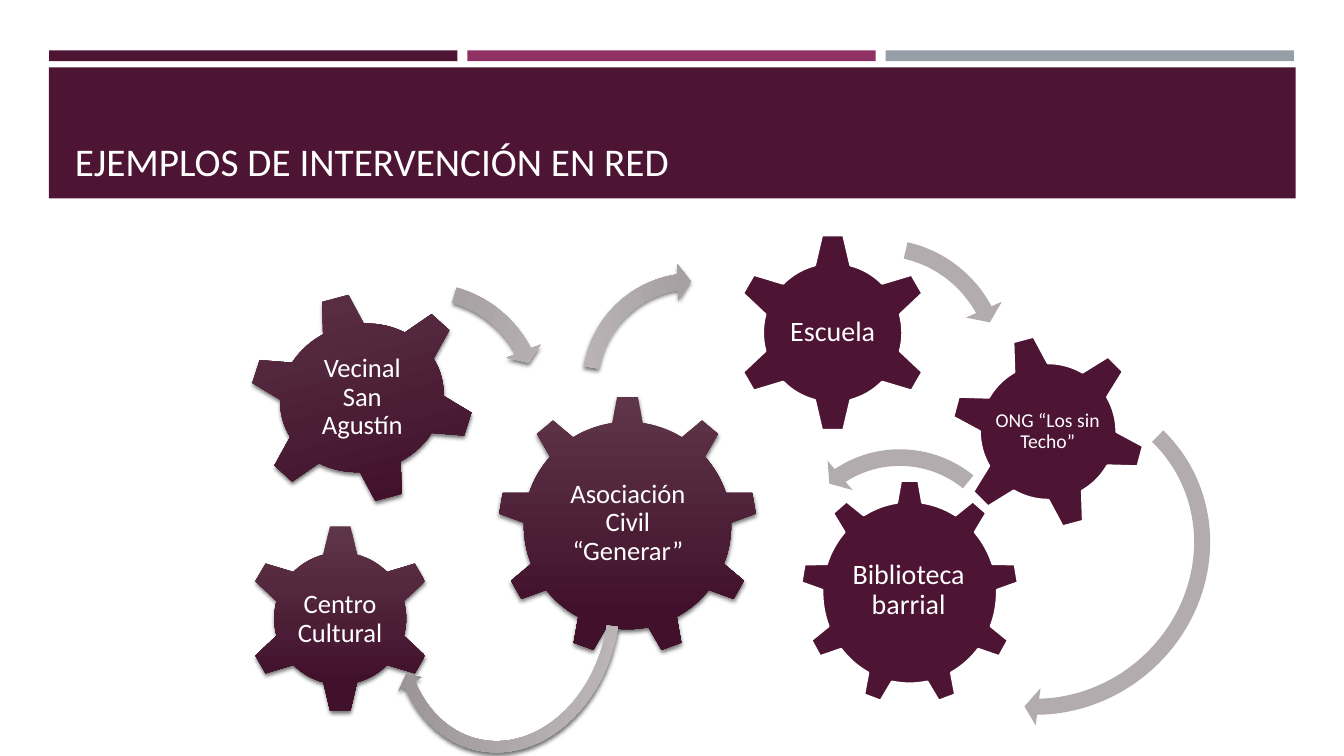
"""Build the slide with two networks of gears linked by circular arrows."""
from dataclasses import dataclass
from typing import Any

from lxml import etree
from pptx import Presentation
from pptx.dml.color import RGBColor
from pptx.enum.shapes import MSO_SHAPE
from pptx.enum.text import MSO_ANCHOR, MSO_AUTO_SIZE, PP_ALIGN
from pptx.oxml.ns import qn
from pptx.util import Cm, Pt

RECTANGLE = MSO_SHAPE.RECTANGLE
GEAR_SIX, GEAR_NINE = MSO_SHAPE.GEAR_6, MSO_SHAPE.GEAR_9
CLOCKWISE, COUNTER = MSO_SHAPE.CIRCULAR_ARROW, MSO_SHAPE.LEFT_CIRCULAR_ARROW
MIDDLE, BOTTOM = MSO_ANCHOR.MIDDLE, MSO_ANCHOR.BOTTOM
CENTER, LEFT = PP_ALIGN.CENTER, PP_ALIGN.LEFT
NO_AUTOFIT = MSO_AUTO_SIZE.NONE
TITLE_ONLY_LAYOUT = 5

Box = tuple[float, float, float, float]
Paint = tuple[str, ...]


@dataclass(frozen=True)
class Theme:
    font: str = "Calibri"
    white: str = "FFFFFF"
    plum: str = "4D1434"
    bars: Paint = ("4D1434", "903163", "969FA7")
    shaded_gear: Paint = ("5F3649", "41112C")
    shaded_arrow: Paint = ("C5C0C2", "978F92")
    flat_arrow: Paint = ("B2ACAE",)
    gradient_end: float = 0.84
    title_size: float = 28
    large_size: float = 20
    medium_size: float = 19
    small_size: float = 14
    outline_width: float = 1.75


@dataclass(frozen=True)
class Gear:
    text: str
    kind: Any
    box: Box
    label_box: Box
    size: float
    rotation: float = 0


@dataclass(frozen=True)
class Arrow:
    kind: Any
    box: Box
    rotation: float
    curve: tuple[float, ...]
    flipped: bool = False


@dataclass(frozen=True)
class Network:
    gears: tuple[Gear, ...]
    arrows: tuple[Arrow, ...]
    gear_paint: Paint
    arrow_paint: Paint
    outlined: bool


THEME = Theme()
LONG_CURVE = (0.047, 2.99, 25.2, 158.5, 0.055)
LEFT_CURVE = (0.065, 4.3, 104.89, 148.38, 0.075)
SHORT_CURVE = (0.06, 3.94, 133.14, 105.08, 0.07)

NETWORKS = (
    Network(
        (
            Gear("Asociación Civil “Generar”", GEAR_NINE, (12.55, 9.98, 6.53, 6.53),
                 (13.87, 11.51, 3.91, 3.35), THEME.medium_size),
            Gear("Centro Cultural", GEAR_SIX, (6.2, 13.21, 4.75, 4.75),
                 (7.39, 14.43, 2.36, 2.34), THEME.medium_size),
            Gear("Vecinal San Agustín", GEAR_SIX, (6.25, 7.37, 5.74, 5.31),
                 (7.54, 8.51, 3.18, 3.02), THEME.medium_size, 345),
        ),
        (
            Arrow(CLOCKWISE, (9.07, 12.47, 7.39, 6.02), 102.2, LONG_CURVE),
            Arrow(COUNTER, (14.43, 6.63, 6.07, 6.07), 256.3, LEFT_CURVE, True),
            Arrow(CLOCKWISE, (7.42, 6.88, 6.55, 6.55), 110.5, SHORT_CURVE),
        ),
        THEME.shaded_gear, THEME.shaded_arrow, False,
    ),
    Network(
        (
            Gear("Biblioteca barrial", GEAR_NINE, (20.17, 12.09, 5.51, 5.69),
                 (21.26, 13.41, 3.28, 2.95), THEME.large_size),
            Gear("Escuela", GEAR_SIX, (18.47, 5.87, 5.03, 5.03),
                 (19.74, 7.14, 2.49, 2.49), THEME.large_size),
            Gear("ONG “Los sin Techo”", GEAR_SIX, (23.95, 8.41, 4.93, 4.93),
                 (25.02, 9.5, 2.77, 2.77), THEME.small_size, 345),
        ),
        (
            Arrow(CLOCKWISE, (22.02, 9.35, 8.61, 9.07), 50.4, LONG_CURVE),
            Arrow(COUNTER, (19.46, 11.05, 6.43, 6.43), 61.8, LEFT_CURVE),
            Arrow(CLOCKWISE, (18.49, 5.82, 7.26, 7.09), 107.8, SHORT_CURVE),
        ),
        (THEME.plum,), THEME.flat_arrow, True,
    ),
)


def color(value: str) -> RGBColor:
    return RGBColor.from_string(value)


def lengths(box: Box) -> list[Cm]:
    return [Cm(value) for value in box]


def apply_format(target: Any, values: dict[str, Any]) -> None:
    for name, value in values.items():
        setattr(target, name, value)


def add_shadow(shape: Any) -> None:
    effects = shape.element.spPr.find(qn("a:effectLst"))
    shadow = etree.SubElement(effects, qn("a:outerShdw"), blurRad=str(Pt(3)),
                              dist=str(Pt(2)), dir="5400000", rotWithShape="0")
    shade = etree.SubElement(shadow, qn("a:srgbClr"), val="000000")
    etree.SubElement(shade, qn("a:alpha"), val="55000")


def add_painted(shapes: Any, kind: Any, box: Box, paint: Paint, rotation: float = 0) -> Any:
    shape = shapes.add_shape(kind, *lengths(box))
    shape.rotation = rotation
    shape.shadow.inherit = False
    shape.line.fill.background()
    if len(paint) == 1:
        shape.fill.solid()
        shape.fill.fore_color.rgb = color(paint[0])
        return shape
    shape.fill.gradient()
    shape.fill.gradient_angle = 270
    for stop, value, position in zip(shape.fill.gradient_stops, paint, (0, THEME.gradient_end)):
        apply_format(stop, {"position": position})
        stop.color.rgb = color(value)
    add_shadow(shape)
    return shape


def write_text(shape: Any, text: str, size: float, frame: dict[str, Any],
               layout: dict[str, Any]) -> None:
    text_frame = shape.text_frame
    text_frame.text = text
    apply_format(text_frame, {"word_wrap": True, "auto_size": NO_AUTOFIT} | frame)
    paragraph = text_frame.paragraphs[0]
    apply_format(paragraph, layout)
    font = paragraph.runs[0].font
    apply_format(font, {"name": THEME.font, "size": Pt(size)})
    font.color.rgb = color(THEME.white)


def add_gear(shapes: Any, gear: Gear, network: Network) -> None:
    shape = add_painted(shapes, gear.kind, gear.box, network.gear_paint, gear.rotation)
    if network.outlined:
        shape.line.color.rgb = color(THEME.white)
        shape.line.width = Pt(THEME.outline_width)
    label = shapes.add_textbox(*lengths(gear.label_box))
    sides = ("margin_left", "margin_top", "margin_right", "margin_bottom")
    write_text(label, gear.text, gear.size,
               {"vertical_anchor": MIDDLE} | dict.fromkeys(sides, Cm(0.07)),
               {"alignment": CENTER, "line_spacing": 0.9})


def add_arrow(shapes: Any, arrow: Arrow, paint: Paint) -> None:
    shape = add_painted(shapes, arrow.kind, arrow.box, paint, arrow.rotation)
    for index, value in enumerate(arrow.curve):
        shape.adjustments[index] = value
    if arrow.flipped:
        shape.element.spPr.find(qn("a:xfrm")).set("flipH", "1")


def add_heading(slide: Any) -> None:
    for index, value in enumerate(THEME.bars):
        add_painted(slide.shapes, RECTANGLE, (1.24 + 10.54 * index, 1.27, 10.29, 0.27), (value,))
    add_painted(slide.shapes, RECTANGLE, (1.23, 1.7, 31.42, 3.3), (THEME.plum,))
    title = slide.shapes.title
    apply_format(title, dict(zip(("left", "top", "width", "height"),
                                 lengths((1.63, 1.96, 30.63, 2.82)))))
    write_text(title, "EJEMPLOS DE INTERVENCIÓN EN RED", THEME.title_size,
               {"vertical_anchor": BOTTOM}, {"alignment": LEFT})
    title.element.getparent().append(title.element)


def main() -> None:
    presentation = Presentation()
    apply_format(presentation, {"slide_width": Cm(33.87), "slide_height": Cm(19.05)})
    slide = presentation.slides.add_slide(presentation.slide_layouts[TITLE_ONLY_LAYOUT])
    add_heading(slide)
    for network in NETWORKS:
        group = slide.shapes.add_group_shape()
        for gear in network.gears:
            add_gear(group.shapes, gear, network)
        for arrow in network.arrows:
            add_arrow(group.shapes, arrow, network.arrow_paint)
    presentation.save("out.pptx")


if __name__ == "__main__":
    main()
